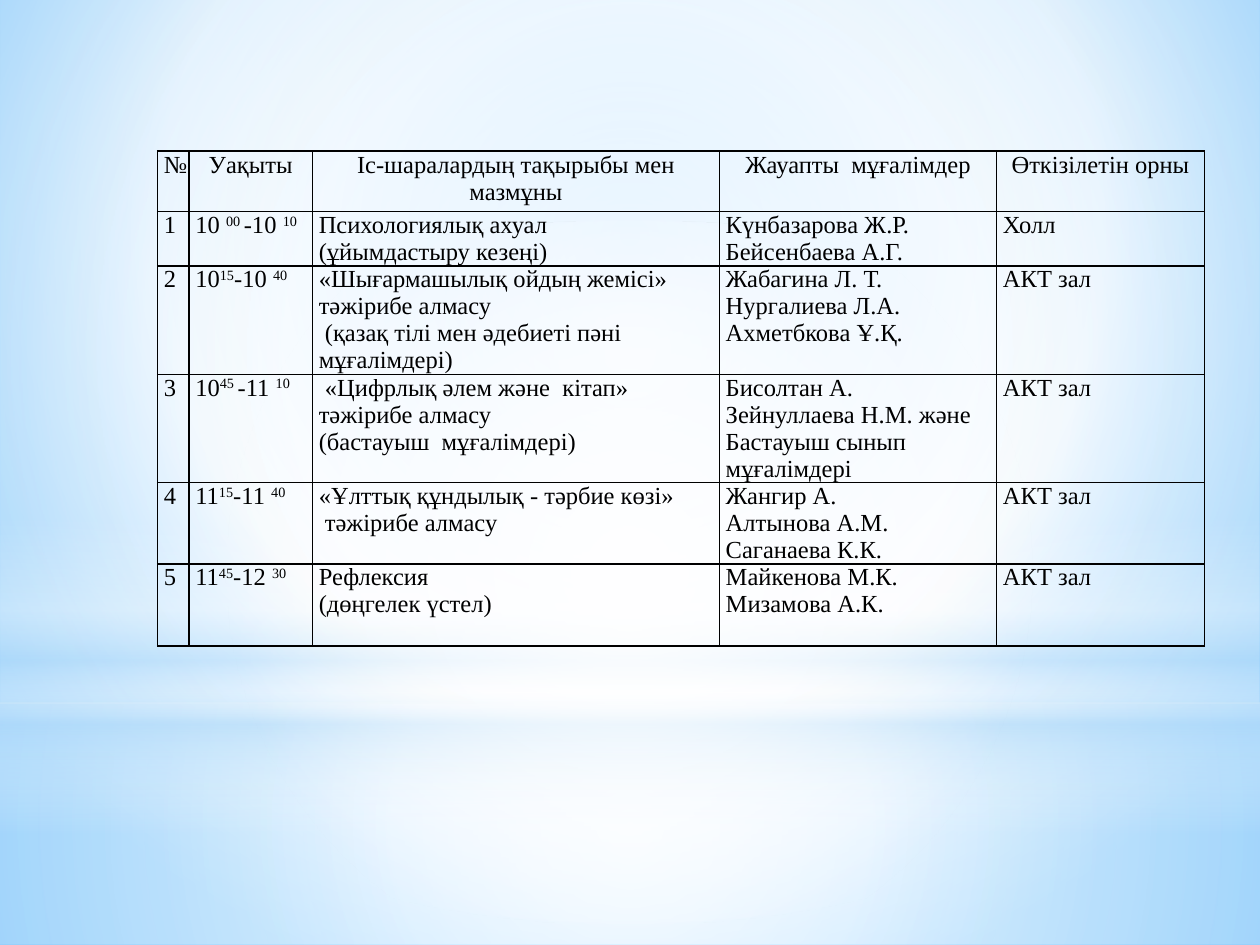
from lxml import etree
from pptx import Presentation
from pptx.dml.color import RGBColor
from pptx.enum import shapes, text
from pptx.oxml import ns
from pptx.util import Inches, Pt

FONT, SIZE, INK = "Times New Roman", 14, "000000"
CENTER = (50, 50, 50, 50)

# Gradient stops: position %, colour, opacity %
BACKGROUND = [(0, "9ED5FF", 100), (60, "FFFFFF", 100), (100, "5BB9FF", 100)]
# Shape, top, height, stops, focus (None is a vertical linear gradient)
LAYERS = [
    ("RECTANGLE", 5.58, 1.92,
     [(0, "FFFFFF", 91), (37, "FFFFFF", 76), (100, "B4DCFA", 79)], CENTER),
    ("RECTANGLE", 0, 5.58,
     [(0, "FFFFFF", 89), (48, "FFFFFF", 62), (100, "B4DCFA", 79)], CENTER),
    ("RECTANGLE", 4.12, 2.5,
     [(0, "FFFFFF", 0), (29, "FFFFFF", 30), (45, "B4DCFA", 40),
      (55, "FFFFFF", 26), (65, "B4DCFA", 60), (100, "FFFFFF", 0)], None),
    ("OVAL", 1.75, 5.58, [(0, "FFFFFF", 100), (56, "FFFFFF", 0)], CENTER),
]

COLUMNS = [0.25, 0.98, 3.23, 2.2, 1.65]
ROWS = [0.48, 0.43, 0.86, 0.86, 0.64, 0.65]
# A line break starts a paragraph; text between carets is superscript
SCHEDULE = [
    ("№", "Уақыты", "Іс-шаралардың тақырыбы мен мазмұны",
     "Жауапты  мұғалімдер", "Өткізілетін орны"),
    ("1", "10 ^00 ^-10 ^10^", "Психологиялық ахуал\n(ұйымдастыру кезеңі)",
     "Күнбазарова Ж.Р.\nБейсенбаева А.Г.", "Холл"),
    ("2", "10^15^-10 ^40^",
     "«Шығармашылық ойдың жемісі» тәжірибе алмасу\n"
     " (қазақ тілі мен әдебиеті пәні мұғалімдері)",
     "Жабагина Л. Т.\nНургалиева Л.А.\nАхметбкова Ұ.Қ.", "АКТ зал"),
    ("3", "10^45 ^-11 ^10^",
     " «Цифрлық әлем және  кітап»  тәжірибе алмасу\n(бастауыш  мұғалімдері)",
     "Бисолтан А.\nЗейнуллаева Н.М. және\nБастауыш сынып мұғалімдері", "АКТ зал"),
    ("4", "11^15^-11 ^40^", "«Ұлттық құндылық - тәрбие көзі»\n тәжірибе алмасу",
     "Жангир А.\nАлтынова А.М.\nСаганаева К.К.", "АКТ зал"),
    ("5", "11^45^-12 ^30^", "Рефлексия\n(дөңгелек үстел)",
     "Майкенова М.К.\nМизамова А.К.", "АКТ зал"),
]


def color(value):
    return RGBColor.from_string(value)


def add(parent, tag, **attributes):
    element = etree.SubElement(parent, ns.qn(tag))
    for name, value in attributes.items():
        element.set(name, str(value))
    return element


def set_gradient(fill, owner, stops, focus):
    """Put a gradient in place of the fill found inside the owner element."""
    fill.solid()
    solid = owner.find(".//" + ns.qn("a:solidFill"))
    gradient = etree.Element(ns.qn("a:gradFill"), rotWithShape="1")
    stop_list = add(gradient, "a:gsLst")
    for position, value, opacity in stops:
        stop = add(stop_list, "a:gs", pos=position * 1000)
        add(add(stop, "a:srgbClr", val=value), "a:alpha", val=opacity * 1000)
    if focus:
        sides = {side: part * 1000 for side, part in zip("ltrb", focus)}
        add(add(gradient, "a:path", path="circle"), "a:fillToRect", **sides)
    else:
        add(gradient, "a:lin", ang=90 * 60000, scaled=0)
    solid.getparent().replace(solid, gradient)


def add_layers(slide, width):
    for kind, top, height, stops, focus in LAYERS:
        shape = slide.shapes.add_shape(
            shapes.MSO_SHAPE[kind], 0, Inches(top), width, Inches(height))
        shape.shadow.inherit = False
        shape.line.fill.background()
        set_gradient(shape.fill, shape._element.spPr, stops, focus)


def write_cell(cell, content, alignment):
    cell.margin_left = cell.margin_right = Inches(0.05)
    cell.margin_top = cell.margin_bottom = 0
    frame = cell.text_frame
    for index, line in enumerate(content.split("\n")):
        paragraph = frame.add_paragraph() if index else frame.paragraphs[0]
        paragraph.alignment = alignment
        for part_index, part in enumerate(line.split("^")):
            if not part:
                continue
            run = paragraph.add_run()
            run.text = part
            run.font.name, run.font.size = FONT, Pt(SIZE)
            run.font.bold = False
            run.font.color.rgb = color(INK)
            if part_index % 2:
                run._r.get_or_add_rPr().set("baseline", "30000")


def outline_cell(cell):
    properties = cell._tc.get_or_add_tcPr()
    for side in "LRTB":
        line = add(properties, f"a:ln{side}", w=Pt(1))
        add(add(line, "a:solidFill"), "a:srgbClr", val=INK)
    cell.fill.background()


def add_schedule(slide):
    table = slide.shapes.add_table(
        len(ROWS), len(COLUMNS), Inches(1.25), Inches(1.2),
        Inches(sum(COLUMNS)), Inches(sum(ROWS))).table
    table.first_row = table.horz_banding = False
    for column, width in zip(table.columns, COLUMNS):
        column.width = Inches(width)
    for row_index, (row, height) in enumerate(zip(table.rows, ROWS)):
        row.height = Inches(height)
        alignment = text.PP_ALIGN.LEFT if row_index else text.PP_ALIGN.CENTER
        for cell, content in zip(row.cells, SCHEDULE[row_index]):
            write_cell(cell, content, alignment)
            outline_cell(cell)


def main():
    presentation = Presentation()
    presentation.slide_width, presentation.slide_height = Inches(10), Inches(7.5)
    slide = presentation.slides.add_slide(presentation.slide_layouts[6])
    set_gradient(slide.background.fill, slide._element, BACKGROUND, (20, 10, 20, 60))
    add_layers(slide, presentation.slide_width)
    add_schedule(slide)
    presentation.save("out.pptx")


if __name__ == "__main__":
    main()
